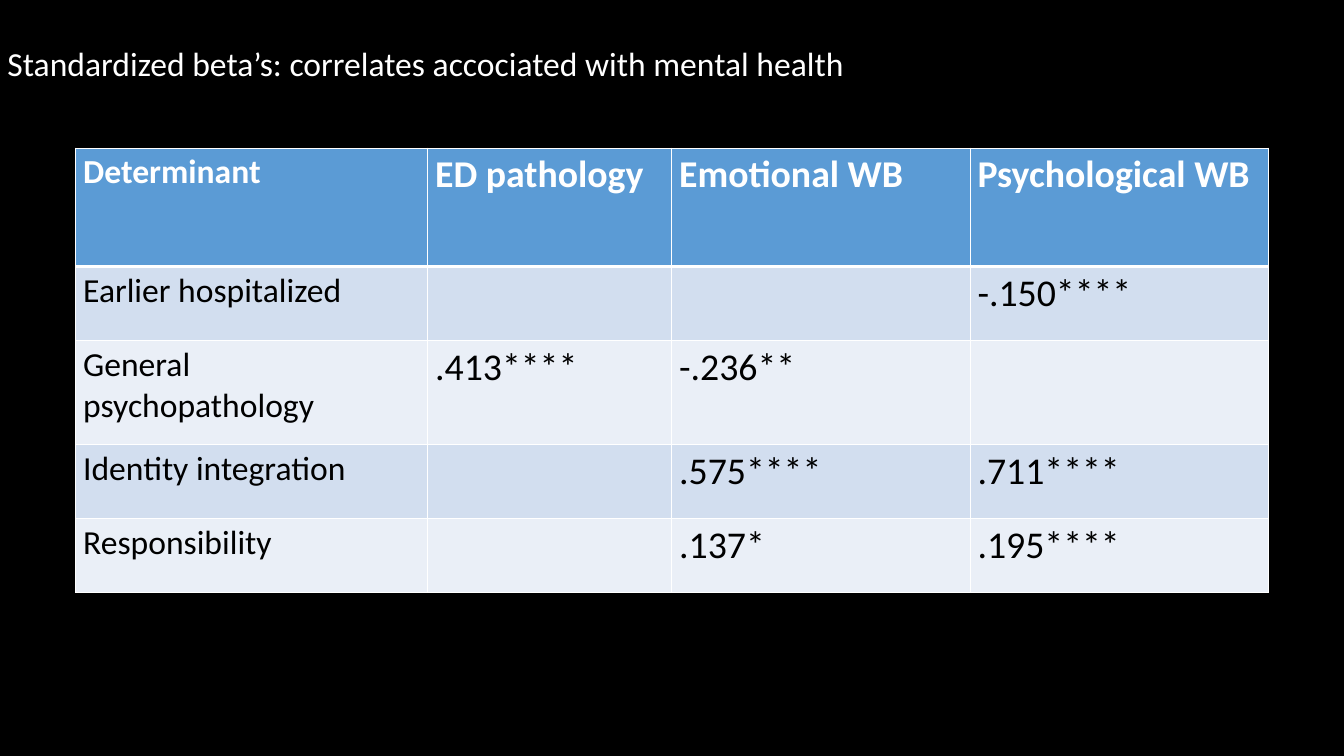
from lxml import etree
from pptx import Presentation
from pptx.dml.color import RGBColor
from pptx.oxml.ns import qn
from pptx.util import Inches, Pt

WIDTH, HEIGHT = 17.78, 10
FONT = "Calibri"
WHITE, BLACK = "FFFFFF", "000000"
HEADER_FILL, BAND_FILLS = "5B9BD5", ("D2DEEF", "EAEFF7")
LABEL_SIZE, VALUE_SIZE = 32, 36
TITLE = "Standardized beta’s: correlates accociated with mental health"
COLUMNS = (4.66, 3.23, 3.95, 3.95)
ROWS = (1.57, 0.98, 1.37, 0.98, 0.98)
BETAS = (
    ("Determinant", "ED pathology", "Emotional WB", "Psychological WB"),
    ("Earlier hospitalized", "", "", "-.150****"),
    ("General psychopathology", ".413****", "-.236**", ""),
    ("Identity integration", "", ".575****", ".711****"),
    ("Responsibility", "", ".137*", ".195****"),
)


def rgb(color):
    """Turn a hex string into a colour."""
    return RGBColor.from_string(color)


def style(p, size, color, bold=False):
    """Set the font of a paragraph."""
    font = p.font
    font.name, font.size, font.bold = FONT, Pt(size), bold
    font.color.rgb = rgb(color)


def add_borders(cell, top, bottom):
    """Draw white borders around a cell, with top and bottom widths in points."""
    tc_pr = cell._tc.get_or_add_tcPr()
    for side, width in (("L", 1), ("R", 1), ("T", top), ("B", bottom)):
        ln = etree.SubElement(tc_pr, qn(f"a:ln{side}"), w=str(Pt(width)))
        fill = etree.SubElement(ln, qn("a:solidFill"))
        etree.SubElement(fill, qn("a:srgbClr"), val=WHITE)


def add_title(s, left, top, width, height):
    """Place the slide title in its box."""
    sp = s.shapes.add_textbox(*map(Inches, (left, top, width, height)))
    tf = sp.text_frame
    tf.word_wrap = True
    p = tf.paragraphs[0]
    p.text = TITLE
    style(p, LABEL_SIZE, WHITE)


def add_beta_table(s, left, top, width, height):
    """Place the table of betas, its columns and rows shared out over the box."""
    box = map(Inches, (left, top, width, height))
    table = s.shapes.add_table(len(ROWS), len(COLUMNS), *box).table
    for column, share in zip(table.columns, COLUMNS):
        column.width = Inches(width * share / sum(COLUMNS))
    for row, share in zip(table.rows, ROWS):
        row.height = Inches(height * share / sum(ROWS))
    for i, texts in enumerate(BETAS):
        header = i == 0
        for j, text in enumerate(texts):
            cell = table.cell(i, j)
            add_borders(cell, 3 if i == 1 else 1, 3 if header else 1)
            cell.fill.solid()
            cell.fill.fore_color.rgb = rgb(HEADER_FILL if header else BAND_FILLS[(i - 1) % 2])
            p = cell.text_frame.paragraphs[0]
            p.text = text
            style(p, VALUE_SIZE if j else LABEL_SIZE, WHITE if header else BLACK, header)


def main():
    """Build and save the slide."""
    prs = Presentation()
    prs.slide_width, prs.slide_height = Inches(WIDTH), Inches(HEIGHT)
    s = prs.slides.add_slide(prs.slide_layouts[6])
    s.background.fill.solid()
    s.background.fill.fore_color.rgb = rgb(BLACK)
    add_beta_table(s, 1, 1.96, WIDTH - 2, 5.88)
    add_title(s, 0, 0.52, WIDTH - 2, 1.25)
    prs.save("out.pptx")


if __name__ == "__main__":
    main()
